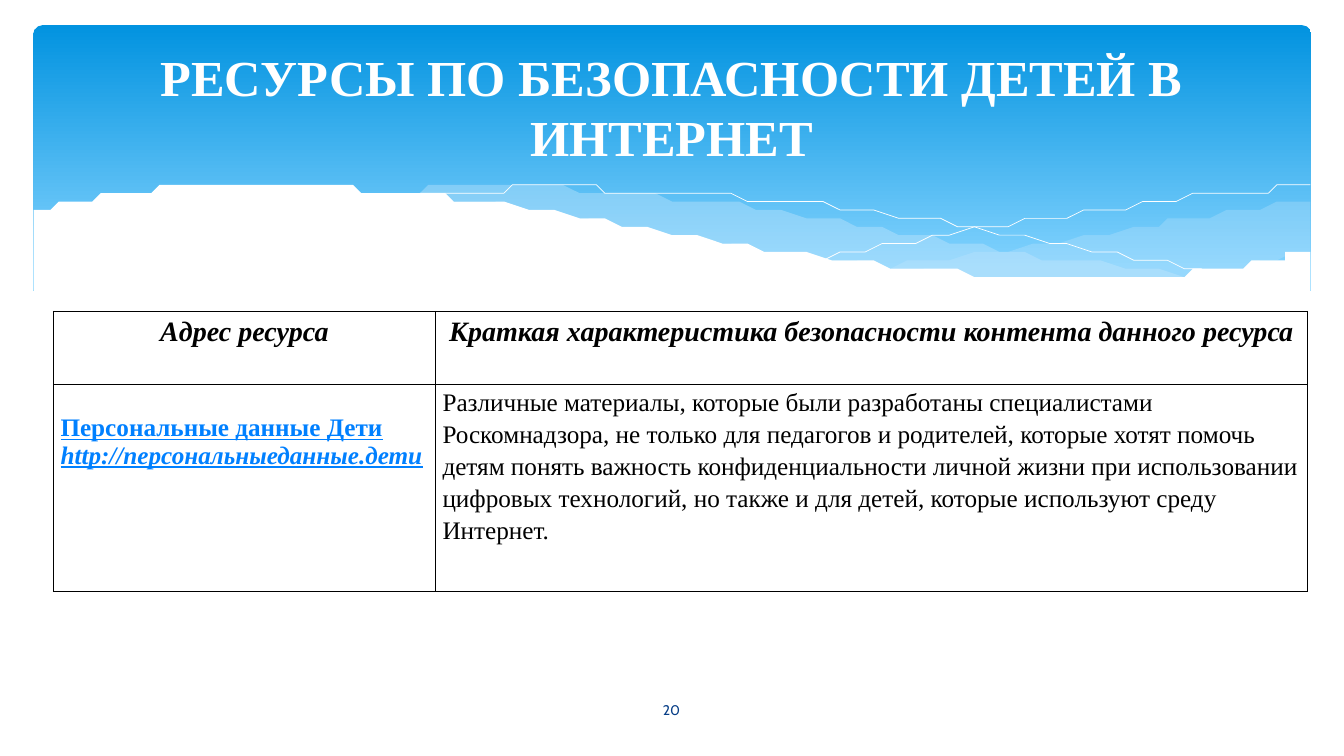
import lxml.etree
import pptx
import pptx.dml.color
import pptx.enum.shapes
import pptx.enum.text
import pptx.oxml.ns
import pptx.util

RGBColor = pptx.dml.color.RGBColor
WHITE = RGBColor(0xFF, 0xFF, 0xFF)
BLACK = RGBColor(0x00, 0x00, 0x00)
DEEP_BLUE = RGBColor(0x02, 0x93, 0xE0)
SKY_BLUE = RGBColor(0x83, 0xD3, 0xFE)
PALE_BLUE = RGBColor(0xC6, 0xE7, 0xFC)
LINK_BLUE = RGBColor(0x00, 0x80, 0xFF)
NAVY = RGBColor(0x07, 0x3E, 0x87)

CELL = 76200  # side of a grid cell; the page is 160 columns by 90 rows
COLUMNS, ROWS = 160, 90
CENTER = pptx.enum.text.PP_ALIGN.CENTER
LEFT = pptx.enum.text.PP_ALIGN.LEFT
MIDDLE = pptx.enum.text.MSO_ANCHOR.MIDDLE
SERIF = "Times New Roman"

TITLE_FONT = {"name": SERIF, "size": pptx.util.Pt(36), "bold": True}
HEADER_FONT = {"name": SERIF, "size": pptx.util.Pt(20), "bold": True, "italic": True}
BODY_FONT = {"name": SERIF, "size": pptx.util.Pt(18)}
LINK_FONT = {**BODY_FONT, "bold": True, "underline": True}
NUMBER_FONT = {"name": "Cabin", "size": pptx.util.Pt(10)}
CENTERED = {"alignment": CENTER}
AIRY = {"line_spacing": 1.15, "space_after": pptx.util.Pt(10)}

RIGHT_BAND = (
    [(105.84, 31.8), (120.48, 29.76), (137.64, 26.76), (147.24, 25.08), (156.12, 23.88)],
    [(156.12, 29.64), (148.56, 31.56), (142.32, 32.64), (133.56, 33.24),
     (126.72, 33.24), (117.12, 32.88), (105.84, 31.8)],
)
MIDDLE_BAND = (
    [(45.84, 22.92), (52.44, 22.44), (60.72, 22.32), (70.68, 22.68), (82.32, 23.76),
     (93.36, 25.32), (106.92, 27.72), (118.68, 29.76), (129.12, 31.2), (142.8, 32.76)],
    [(142.8, 32.76), (134.04, 33.36), (125.52, 33.36), (115.56, 32.88), (104.04, 31.68),
     (90.6, 29.76), (71.88, 26.64), (61.32, 24.84), (54.72, 23.88), (45.84, 22.92)],
)
FALLING_LINE = [(49.56, 23.4), (54.96, 22.8), (61.92, 22.44), (69.24, 22.44), (78.24, 22.8),
                (89.04, 23.64), (101.76, 24.96), (116.4, 27.12), (132.96, 30.12), (145.2, 32.64)]
RISING_LINE = [(98.16, 30.84), (111.24, 28.2), (124.2, 25.92), (138.6, 23.88),
               (147.84, 22.8), (156, 22.2)]
WHITE_WAVE = (
    [(3.72, 25.56), (4.56, 25.2), (8.28, 24.12), (13.56, 23.16), (18.96, 22.44),
     (25.68, 22.08), (33.84, 22.08), (43.32, 22.56), (54.36, 23.64), (71.52, 26.4),
     (88.8, 29.4), (103.56, 31.44), (116.16, 32.64), (126.96, 33.12), (136.08, 33),
     (145.56, 32.04), (151.92, 30.72), (156.36, 29.52)],
    [(156.36, 39.48), (3.72, 39.48)],
)


def grid(*lengths):
    return [pptx.util.Emu(round(length * CELL)) for length in lengths]


def smooth_curve(knots, steps=6):
    """Return points of a cubic Hermite curve through knots ordered along x."""
    slopes = []
    for index in range(len(knots)):
        before, after = knots[max(index - 1, 0)], knots[min(index + 1, len(knots) - 1)]
        slopes.append((after[1] - before[1]) / (after[0] - before[0]))
    points = [knots[0]]
    for (x0, y0), (x1, y1), m0, m1 in zip(knots, knots[1:], slopes, slopes[1:]):
        width = x1 - x0
        for step in range(1, steps + 1):
            t = step / steps
            y = ((2 * t**3 - 3 * t**2 + 1) * y0 + (3 * t**2 - 2 * t**3) * y1
                 + (t**3 - 2 * t**2 + t) * width * m0 + (t**3 - t**2) * width * m1)
            points.append((x0 + t * width, y))
    return points


class ResourceSlide:
    def __init__(self, deck):
        self.page = deck.slides.add_slide(deck.slide_layouts[5])
        self.shapes = self.page.shapes

    def set_text(self, para, text, font, color, layout):
        for name, value in layout.items():
            setattr(para, name, value)
        span = para.add_run()
        span.text = text
        for name, value in font.items():
            setattr(span.font, name, value)
        span.font.color.rgb = color

    def panel(self, left, top, width, height):
        box = self.shapes.add_shape(pptx.enum.shapes.MSO_SHAPE.ROUNDED_RECTANGLE,
                                    *grid(left, top, width, height))
        box.adjustments[0] = 0.034
        box.shadow.inherit = False
        box.line.fill.background()
        box.fill.gradient()
        box.fill.gradient_angle = 270
        for stop, position, color in zip(box.fill.gradient_stops, (0, 0.9), (DEEP_BLUE, SKY_BLUE)):
            stop.position = position
            stop.color.rgb = color

    def outline(self, points, close):
        builder = self.shapes.build_freeform(*points[0], scale=CELL)
        builder.add_line_segments(points[1:], close=close)
        shape = builder.convert_to_shape()
        shape.shadow.inherit = False
        return shape

    def band(self, edges, color, opacity=100):
        shape = self.outline([point for edge in edges for point in
                              (smooth_curve(edge) if len(edge) > 2 else edge)], True)
        shape.line.fill.background()
        shape.fill.solid()
        shape.fill.fore_color.rgb = color
        if opacity < 100:
            tone = shape.element.spPr.find(".//" + pptx.oxml.ns.qn("a:srgbClr"))
            lxml.etree.SubElement(tone, pptx.oxml.ns.qn("a:alpha"), val=str(opacity * 1000))

    def curve(self, knots):
        shape = self.outline(smooth_curve(knots), False)
        shape.fill.background()
        shape.line.color.rgb = WHITE
        shape.line.width = pptx.util.Pt(0.5)

    def title(self, text, *place):
        box = self.shapes.title
        for name, value in zip(("left", "top", "width", "height"), grid(*place)):
            setattr(box, name, value)
        box.text_frame.word_wrap = True
        box.text_frame.vertical_anchor = MIDDLE
        self.set_text(box.text_frame.paragraphs[0], text, TITLE_FONT, WHITE, CENTERED)
        self.shapes.element.append(box.element)  # in front of the waves

    def label(self, text, *place):
        frame = self.shapes.add_textbox(*grid(*place)).text_frame
        frame.word_wrap = True
        frame.vertical_anchor = MIDDLE
        self.set_text(frame.paragraphs[0], text, NUMBER_FONT, NAVY, CENTERED)

    def table(self, left, top, widths, heights, rows):
        table = self.shapes.add_table(len(heights), len(widths),
                                      *grid(left, top, sum(widths), sum(heights))).table
        table.first_row = table.horz_banding = False
        for column, width in zip(table.columns, grid(*widths)):
            column.width = width
        for row, height, contents in zip(table.rows, grid(*heights), rows):
            row.height = height
            for cell, (top_inset, paras) in zip(row.cells, contents):
                self.fill_cell(cell, top_inset, paras)

    def fill_cell(self, cell, top_inset, paras):
        margins = zip(("left", "top", "right", "bottom"), grid(0.85, top_inset, 0.85, 0))
        for side, margin in margins:
            setattr(cell, "margin_" + side, margin)
        self.border(cell)
        cell.fill.background()
        frame = cell.text_frame
        for index, content in enumerate(paras):
            para = frame.add_paragraph() if index else frame.paragraphs[0]
            self.set_text(para, *content)

    def border(self, cell):
        properties = cell._tc.get_or_add_tcPr()
        for side in "LRTB":
            edge = lxml.etree.SubElement(properties, pptx.oxml.ns.qn("a:ln" + side), w="12700")
            fill = lxml.etree.SubElement(edge, pptx.oxml.ns.qn("a:solidFill"))
            lxml.etree.SubElement(fill, pptx.oxml.ns.qn("a:srgbClr"), val=str(BLACK))


def main():
    deck = pptx.Presentation()
    deck.slide_width, deck.slide_height = grid(COLUMNS, ROWS)
    slide = ResourceSlide(deck)
    slide.panel(3.96, 3, 152.16, 32.4)
    slide.band(RIGHT_BAND, PALE_BLUE, 29)
    slide.band(MIDDLE_BAND, PALE_BLUE, 40)
    slide.curve(FALLING_LINE)
    slide.curve(RISING_LINE)
    slide.band(WHITE_WAVE, WHITE)

    headings = [(0, [(text, HEADER_FONT, BLACK, {**CENTERED, **AIRY})]) for text in (
        "Адрес ресурса", "Краткая характеристика безопасности контента данного ресурса")]
    address = (3.5, [
        ("Персональные данные Дети", LINK_FONT, LINK_BLUE, {"alignment": LEFT}),
        ("http://персональныеданные.дети", {**LINK_FONT, "italic": True}, LINK_BLUE,
         {"alignment": LEFT}),
    ])
    summary = (0, [(
        "Различные материалы, которые были разработаны специалистами Роскомнадзора, "
        "не только для педагогов и родителей, которые хотят помочь детям понять важность "
        "конфиденциальности личной жизни при использовании цифровых технологий, но также "
        "и для детей, которые используют среду Интернет.",
        BODY_FONT, BLACK, AIRY)])
    slide.table(6.36, 37.08, (45.48, 103.8), (8.7, 24.6), [headings, [address, summary]])
    slide.title("РЕСУРСЫ ПО БЕЗОПАСНОСТИ ДЕТЕЙ В ИНТЕРНЕТ", 8, 4.4, 144, 16.5)
    slide.label("20", 69.8, 82.1, 20.3, 4.8)
    deck.save("out.pptx")


if __name__ == "__main__":
    main()
